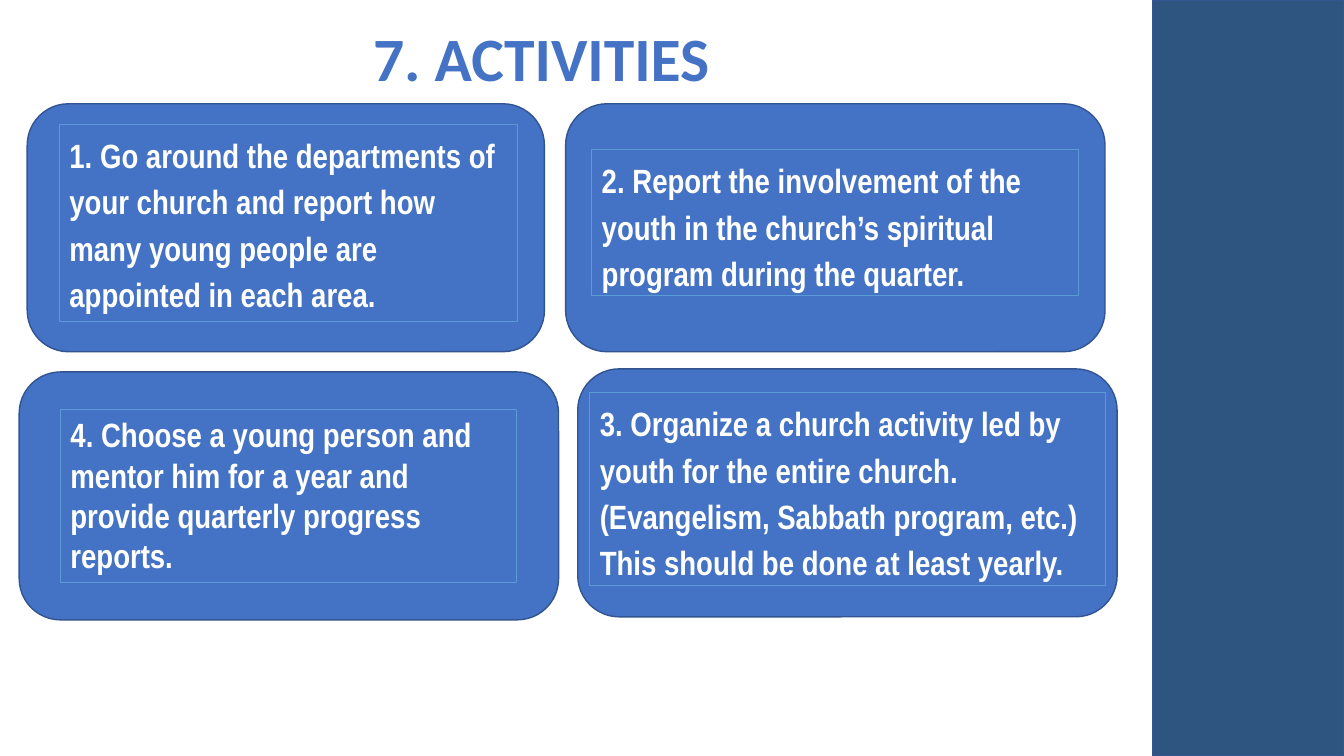
from dataclasses import dataclass
from pptx import Presentation
from pptx import util as u
from pptx.dml.color import RGBColor
from pptx.enum import shapes, text

TITLE = "7. ACTIVITIES"
HEAD = (360, 19, 386, 84)
SIDE = (1143, 0, 190, 750)
CARDS = [
    ((27, 103, 513), (59, 123, 454, 196), 1.15,
     "1. Go around the departments of your church and report how many young "
     "people are appointed in each area."),
    ((561, 103, 535), (587, 148, 483, 145), 1.15,
     "2. Report the involvement of the youth in the church’s spiritual "
     "program during the quarter."),
    ((573, 366, 535), (585, 389, 511, 192), 1.15,
     "3. Organize a church activity led by youth for the entire church. "
     "(Evangelism, Sabbath program, etc.) This should be done at least yearly."),
    ((19, 369, 535), (60, 406, 452, 172), 1.0,
     "4. Choose a young person and mentor him for a year and provide "
     "quarterly progress reports."),
]
TALL = 246
PX = 9144


@dataclass(frozen=True)
class Theme:
    blue: str = "4472C4"
    navy: str = "2E557F"
    edge: str = "325491"
    frame: str = "5B9BD5"
    white: str = "FFFFFF"
    head: str = "Calibri"
    body: str = "Arial Narrow"
    big: int = 44
    small: int = 24


LOOK = Theme()
KIND = shapes.MSO_SHAPE


def scale(box):
    return [n * PX for n in box]


def draw(slide, kind, box, fill, line, width):
    shape = slide.shapes.add_shape(kind, *scale(box))
    shape.shadow.inherit = False
    if fill:
        shape.fill.solid()
        shape.fill.fore_color.rgb = RGBColor.from_string(fill)
    else:
        shape.fill.background()
    shape.line.color.rgb = RGBColor.from_string(line)
    shape.line.width = u.Pt(width)
    return shape


def write(shape, words, face, size, color, align, anchor, space):
    frame = shape.text_frame
    frame.text = words
    frame.word_wrap = True
    frame.auto_size = text.MSO_AUTO_SIZE.NONE
    frame.vertical_anchor = anchor
    line = frame.paragraphs[0]
    line.alignment = align
    line.line_spacing = space
    font = line.runs[0].font
    font.name, font.size, font.bold = face, u.Pt(size), True
    font.color.rgb = RGBColor.from_string(color)


def main():
    deck = Presentation()
    deck.slide_width, deck.slide_height = scale((1333, 750))
    slide = deck.slides.add_slide(deck.slide_layouts[5])

    title = slide.shapes.title
    title.left, title.top, title.width, title.height = scale(HEAD)
    write(title, TITLE, LOOK.head, LOOK.big, LOOK.blue,
          text.PP_ALIGN.LEFT, text.MSO_ANCHOR.MIDDLE, 0.9)

    draw(slide, KIND.RECTANGLE, SIDE, LOOK.navy, LOOK.edge, 1)
    for card, box, space, words in CARDS:
        draw(slide, KIND.FLOWCHART_ALTERNATE_PROCESS, (*card, TALL),
             LOOK.blue, LOOK.edge, 1)
        label = draw(slide, KIND.RECTANGLE, box, None, LOOK.frame, 0.5)
        write(label, words, LOOK.body, LOOK.small, LOOK.white,
              text.PP_ALIGN.LEFT, text.MSO_ANCHOR.TOP, space)

    deck.save("out.pptx")


if __name__ == "__main__":
    main()
